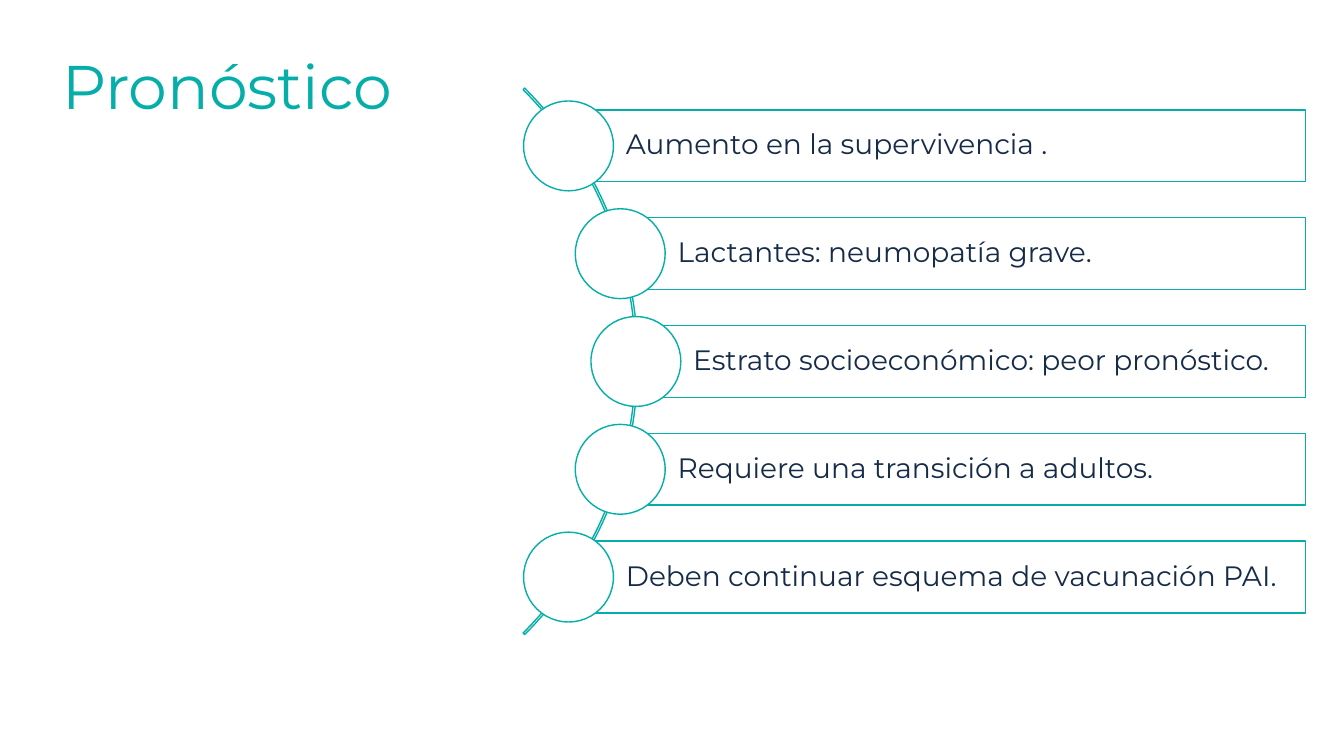
from math import sqrt
from pptx import Presentation
from pptx.dml.color import RGBColor
from pptx.enum.shapes import MSO_SHAPE
from pptx.enum.text import MSO_ANCHOR, PP_ALIGN
from pptx.util import Pt

ARC, RECT, OVAL = MSO_SHAPE.BLOCK_ARC, MSO_SHAPE.RECTANGLE, MSO_SHAPE.OVAL
MIDDLE, LEFT = MSO_ANCHOR.MIDDLE, PP_ALIGN.LEFT

TITLE = "Pronóstico"
POINTS = [
    "Aumento en la supervivencia .",
    "Lactantes: neumopatía grave.",
    "Estrato socioeconómico: peor pronóstico.",
    "Requiere una transición a adultos.",
    "Deben continuar esquema de vacunación PAI.",
]
THEME = {
    "teal": RGBColor(0x06, 0xAE, 0xAA),
    "navy": RGBColor(0x15, 0x2B, 0x48),
    "white": RGBColor(0xFF, 0xFF, 0xFF),
    "font": "Montserrat",
    "head": Pt(44),
    "body": Pt(20),
    "line": Pt(1),
}
HEAD_BOX = (37.4, 11.5, 828, 104.4)
ARC_BOX = (-96.4, -17.9, 552, 552)
ARC_ADJ = (189, 27, 0.0028)
MID_X, MID_Y, RADIUS = 454.2, 258.2, 270.5
STEP, ROW_H, DOT, RIGHT = 77, 51.2, 64.2, 932.7


def put(target, values):
    for name, value in values.items():
        setattr(target, name, value)


def write(shape, text, size, color, inset):
    frame = shape.text_frame
    put(frame, {"word_wrap": True, "vertical_anchor": MIDDLE, **inset})
    para = frame.paragraphs[0]
    put(para, {"text": text, "alignment": LEFT, "line_spacing": 0.9})
    put(para.runs[0].font, {"name": THEME["font"], "size": size})
    para.runs[0].font.color.rgb = color


def draw(slide, kind, box, filled=True):
    shape = slide.shapes.add_shape(kind, *map(Pt, box))
    shape.shadow.inherit = False
    if filled:
        shape.fill.solid()
        shape.fill.fore_color.rgb = THEME["white"]
    else:
        shape.fill.background()
    shape.line.color.rgb = THEME["teal"]
    shape.line.width = THEME["line"]
    return shape


def main():
    deck = Presentation()
    put(deck, {"slide_width": Pt(960), "slide_height": Pt(540)})
    slide = deck.slides.add_slide(deck.slide_layouts[6])

    head = slide.shapes.add_textbox(*map(Pt, HEAD_BOX))
    write(head, TITLE, THEME["head"], THEME["teal"], {})

    arc = draw(slide, ARC, ARC_BOX, False)
    for i, value in enumerate(ARC_ADJ):
        arc.adjustments[i] = value

    inset = {"margin_left": Pt(41), "margin_right": Pt(4),
             "margin_top": Pt(4), "margin_bottom": Pt(4)}
    for i, text in enumerate(POINTS):
        rise = (i - (len(POINTS) - 1) / 2) * STEP
        x = MID_X - RADIUS + sqrt(RADIUS ** 2 - rise ** 2)
        y = MID_Y + rise
        row = draw(slide, RECT, (x, y - ROW_H / 2, RIGHT - x, ROW_H))
        write(row, text, THEME["body"], THEME["navy"], inset)
        draw(slide, OVAL, (x - DOT / 2, y - DOT / 2, DOT, DOT))

    deck.save("out.pptx")


if __name__ == "__main__":
    main()
